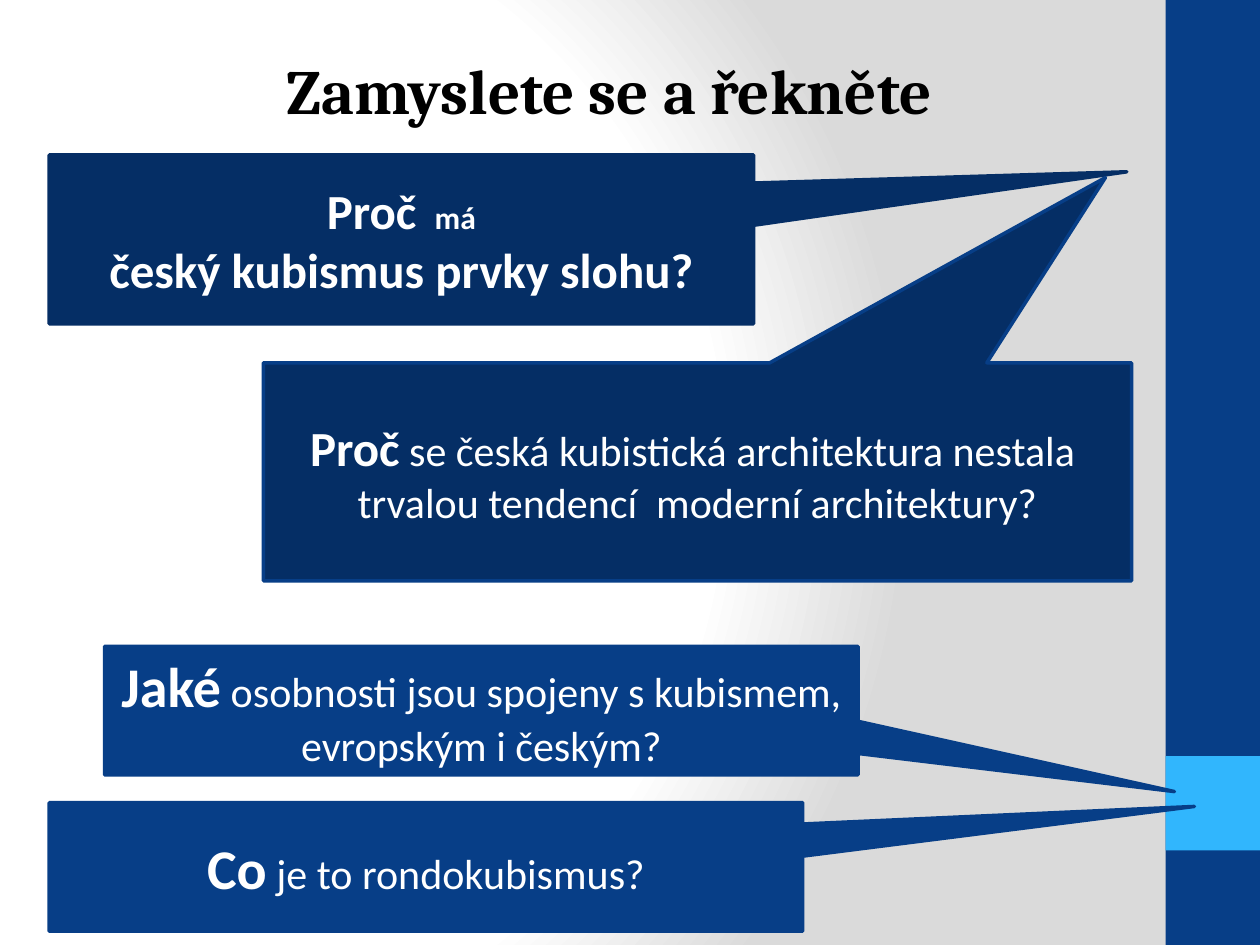
from pptx import Presentation
from pptx.dml.color import RGBColor
from pptx.enum.shapes import MSO_SHAPE as Shape
from pptx.enum.text import MSO_ANCHOR as Anchor, MSO_AUTO_SIZE as AutoSize, PP_ALIGN as Align
from pptx.oxml import parse_xml
from pptx.oxml.ns import nsdecls
from pptx.util import Inches, Pt

BLACK = RGBColor(0x00, 0x00, 0x00)
WHITE = RGBColor(0xFF, 0xFF, 0xFF)
SILVER = RGBColor(0xDA, 0xDA, 0xDA)
BLUE = RGBColor(0x07, 0x3E, 0x87)
NAVY = RGBColor(0x05, 0x2E, 0x65)
SKY = RGBColor(0x31, 0xB6, 0xFD)


class QuestionSlide:
    """Draws the parts of the question slide in one shared style."""

    heading_font = "Cambria"
    body_font = "Calibri"

    def __init__(self, slide):
        self.slide = slide

    def background(self, stops):
        colours = "".join(
            f'<a:gs pos="{percent * 1000}"><a:srgbClr val="{colour}"/></a:gs>'
            for percent, colour in stops
        )
        backdrop = parse_xml(
            f'<p:bg {nsdecls("p", "a")}><p:bgPr><a:gradFill rotWithShape="1">'
            f'<a:gsLst>{colours}</a:gsLst><a:path path="circle">'
            '<a:fillToRect l="20000" t="50000" r="100000" b="50000"/></a:path>'
            '</a:gradFill><a:effectLst/></p:bgPr></p:bg>'
        )
        self.slide.element.cSld.insert(0, backdrop)

    def shape(self, kind, box, fill):
        shape = self.slide.shapes.add_shape(kind, *map(Inches, box))
        shape.shadow.inherit = False
        shape.fill.solid()
        shape.fill.fore_color.rgb = fill
        return shape

    def band(self, box, fill):
        self.shape(Shape.RECTANGLE, box, fill).line.fill.background()

    def add_words(self, paragraph, words, size, bold, font, colour):
        paragraph.alignment = Align.CENTER
        run = paragraph.add_run()
        run.text = words
        run.font.size = Pt(size)
        run.font.bold = bold
        run.font.name = font
        run.font.color.rgb = colour

    def title(self, box, words):
        heading = self.slide.shapes.add_textbox(*map(Inches, box)).text_frame
        heading.word_wrap = True
        heading.auto_size = AutoSize.SHAPE_TO_FIT_TEXT
        self.add_words(heading.paragraphs[0], words, 36, True, self.heading_font, BLACK)

    def callout(self, box, tip, fill, outline, lines):
        bubble = self.shape(Shape.RECTANGULAR_CALLOUT, box, fill)
        bubble.line.color.rgb = outline
        bubble.line.width = Pt(2)
        for index, offset in enumerate(tip):
            bubble.adjustments[index] = offset
        frame = bubble.text_frame
        frame.word_wrap = True
        frame.vertical_anchor = Anchor.MIDDLE
        for index, runs in enumerate(lines):
            paragraph = frame.add_paragraph() if index else frame.paragraphs[0]
            for words, size, bold in runs:
                self.add_words(paragraph, words, size, bold, self.body_font, WHITE)


def main():
    deck = Presentation()
    deck.slide_width, deck.slide_height = Inches(10), Inches(7.5)
    page = QuestionSlide(deck.slides.add_slide(deck.slide_layouts[6]))

    page.background([(0, WHITE), (75, WHITE), (100, SILVER)])
    page.band((9.25, 0, 0.75, 7.5), BLUE)
    page.band((9.25, 6, 0.75, 0.75), SKY)

    page.callout((0.39, 1.23, 5.59, 1.34), (1.03, -0.4), NAVY, NAVY, [
        [("Proč ", 28, True), (" má", 18, True)],
        [("český kubismus prvky slohu?", 28, True)],
    ])
    page.callout((2.09, 2.88, 6.89, 1.73), (0.47, -1.35), NAVY, BLUE, [
        [("Proč", 28, True), (" se česká kubistická architektura nestala ", 24, False)],
        [("trvalou tendencí  moderní architektury?", 24, False)],
    ])
    page.callout((0.39, 6.37, 5.98, 1.02), (1.02, -0.47), BLUE, BLUE, [
        [("Co", 32, True), (" je to rondokubismus?", 24, False)],
    ])
    page.title((0.5, 0.36, 8.67, 0.71), "Zamyslete se a řekněte")
    page.callout((0.83, 5.13, 5.98, 1.02), (0.92, 0.63), BLUE, BLUE, [
        [("Jaké", 32, True),
         (" osobnosti jsou spojeny s kubismem, evropským i českým?", 24, False)],
    ])

    deck.save("out.pptx")


if __name__ == "__main__":
    main()
